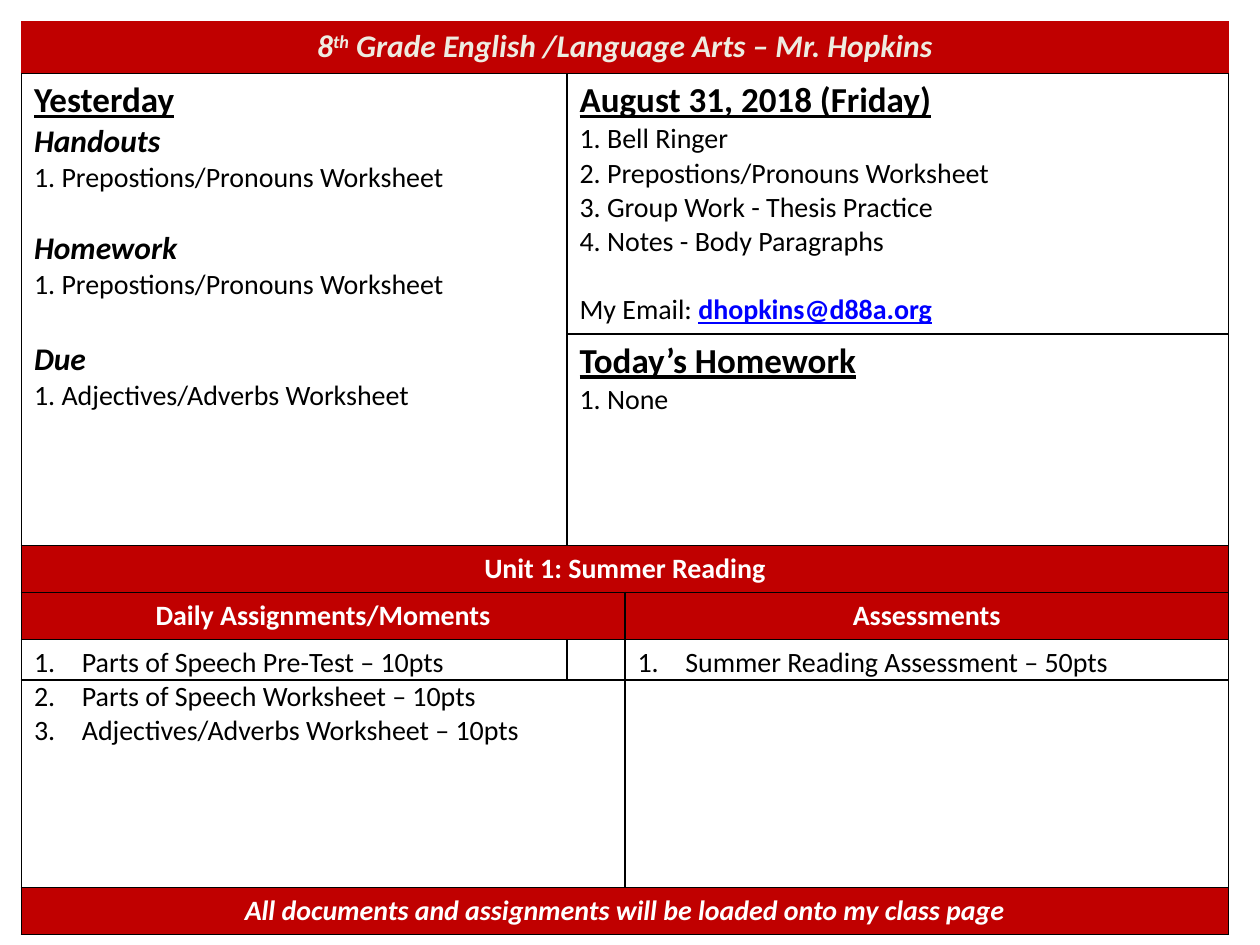
from lxml.etree import SubElement
from pptx import Presentation
from pptx.dml.color import RGBColor
from pptx.enum.text import PP_ALIGN
from pptx.oxml import parse_xml
from pptx.oxml.ns import nsdecls, qn
from pptx.util import Pt

EMU_PER_PX = 9144  # 100 px to the inch
BLACK = RGBColor(0x00, 0x00, 0x00)
WHITE = RGBColor(0xFF, 0xFF, 0xFF)
RED = RGBColor(0xC0, 0x00, 0x00)
CREAM = RGBColor(0xEE, 0xEC, 0xE1)
LINK_BLUE = RGBColor(0x00, 0x00, 0xFF)
NO_STYLE = "{2D5ABB26-0587-4C30-8999-92F81FD0307C}"
LEFT, WIDTH = 17, 958
LINE_GAP, HEADING_GAP = 19.5, 22


def px(length):
    return int(length * EMU_PER_PX)


class Agenda:
    font = "Calibri"

    def __init__(self, slide):
        self.slide = slide

    def table(self, top, columns, rows, bordered=True):
        """Add a plain table and return it; columns and rows are sizes in px."""
        frame = self.slide.shapes.add_table(
            len(rows), len(columns), px(LEFT), px(top), px(WIDTH), px(sum(rows)))
        table = frame.table
        table.first_row = table.horz_banding = False
        table._tbl.tblPr.find(qn("a:tableStyleId")).text = NO_STYLE
        for column, width in zip(table.columns, columns):
            column.width = px(width)
        for row, height in zip(table.rows, rows):
            row.height = px(height)
        for cell in table.iter_cells():
            cell.fill.background()
            if bordered:
                self.border(cell)
        return table

    def border(self, cell):
        for index, side in enumerate(("lnL", "lnR", "lnT", "lnB")):
            line = parse_xml(
                f'<a:{side} {nsdecls("a")} w="{Pt(1)}"><a:solidFill>'
                f'<a:srgbClr val="{BLACK}"/></a:solidFill></a:{side}>')
            cell._tc.get_or_add_tcPr().insert(index, line)

    def span(self, para, text, size=16, color=BLACK, bold=False, italic=False,
             underline=False, raised=False):
        span = para.add_run()
        span.text = text
        font = span.font
        font.name, font.size, font.color.rgb = self.font, Pt(size), color
        font.bold, font.italic, font.underline = bold, italic, underline
        if raised:
            span._r.get_or_add_rPr().set("baseline", "30000")

    def para(self, cell, text, align=PP_ALIGN.LEFT, hang=0, before=0,
             numbered=False, **style):
        """Fill the cell's first paragraph, or add one below those it has."""
        frame = cell.text_frame
        para = frame.add_paragraph() if frame.text else frame.paragraphs[0]
        para.alignment = align
        if before:
            para.space_before = Pt(before)
        properties = para._p.get_or_add_pPr()
        if hang:
            properties.set("marL", str(px(hang)))
            properties.set("indent", str(-px(hang)))
        if numbered:
            SubElement(properties, qn("a:buAutoNum"), type="arabicPeriod")
        self.span(para, text, **style)
        return para

    def banner(self, cell, text, color=WHITE, **style):
        cell.fill.solid()
        cell.fill.fore_color.rgb = RED
        return self.para(cell, text, align=PP_ALIGN.CENTER, color=color,
                         bold=True, **style)

    def heading(self, cell, text, hang=0):
        self.para(cell, text, hang=hang, size=20, bold=True, underline=True)


def add_lessons(agenda):
    table = agenda.table(58, [433, 525], [183, 183])
    yesterday, today, homework = table.cell(0, 0), table.cell(0, 1), table.cell(1, 1)
    yesterday.merge(table.cell(1, 0))

    agenda.heading(yesterday, "Yesterday")
    for title, item, gap, hang in (
            ("Handouts", "1. Prepostions/Pronouns Worksheet", 0, 38),
            ("Homework", "1. Prepostions/Pronouns Worksheet", LINE_GAP, 38),
            ("Due", "1. Adjectives/Adverbs Worksheet", HEADING_GAP, 0)):
        agenda.para(yesterday, title, before=gap, size=18, bold=True, italic=True)
        agenda.para(yesterday, item, hang=hang)

    for cell, title, items in (
            (today, "August 31, 2018 (Friday)",
             ("1. Bell Ringer", "2. Prepostions/Pronouns Worksheet",
              "3. Group Work - Thesis Practice", "4. Notes - Body Paragraphs")),
            (homework, "Today’s Homework", ("1. None",))):
        agenda.heading(cell, title, hang=58)
        for item in items:
            agenda.para(cell, item, hang=58)
    email = agenda.para(today, "My Email: ", hang=58, before=LINE_GAP)
    agenda.span(email, "dhopkins@d88a.org", color=LINK_BLUE, bold=True, underline=True)


def add_title(agenda):
    cell = agenda.table(17, [WIDTH], [41], bordered=False).cell(0, 0)
    style = dict(size=18, color=CREAM, italic=True)
    title = agenda.banner(cell, "8", **style)
    agenda.span(title, "th", bold=True, raised=True, **style)
    agenda.span(title, " Grade English /Language Arts – Mr. Hopkins", bold=True, **style)


def add_unit(agenda):
    table = agenda.table(433, [WIDTH // 2] * 2, [37, 37, 197, 37])
    for row in (0, 3):
        table.cell(row, 0).merge(table.cell(row, 1))
    agenda.banner(table.cell(0, 0), "Unit 1: Summer Reading")
    for column, (title, items) in enumerate((
            ("Daily Assignments/Moments",
             ("Parts of Speech Pre-Test – 10pts", "Parts of Speech Worksheet – 10pts",
              "Adjectives/Adverbs Worksheet – 10pts")),
            ("Assessments", ("Summer Reading Assessment – 50pts",)))):
        agenda.banner(table.cell(1, column), title)
        for item in items:
            agenda.para(table.cell(2, column), item, hang=38, numbered=True)
    agenda.banner(table.cell(3, 0),
                  "All documents and assignments will be loaded onto my class page",
                  italic=True)


def main():
    deck = Presentation()
    deck.slide_width, deck.slide_height = px(1000), px(750)
    agenda = Agenda(deck.slides.add_slide(deck.slide_layouts[6]))
    add_lessons(agenda)
    add_title(agenda)
    add_unit(agenda)
    deck.save("out.pptx")


if __name__ == "__main__":
    main()
